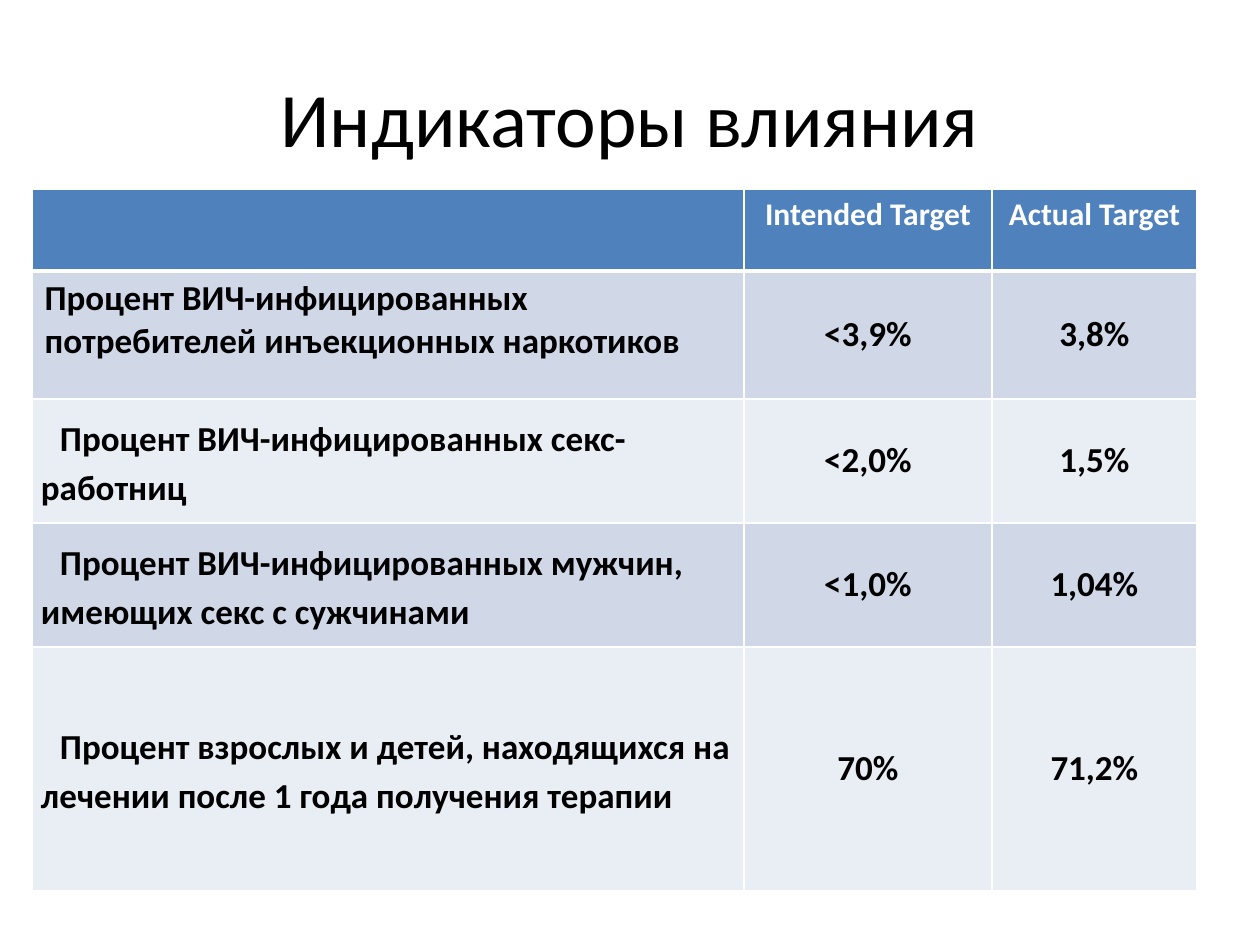
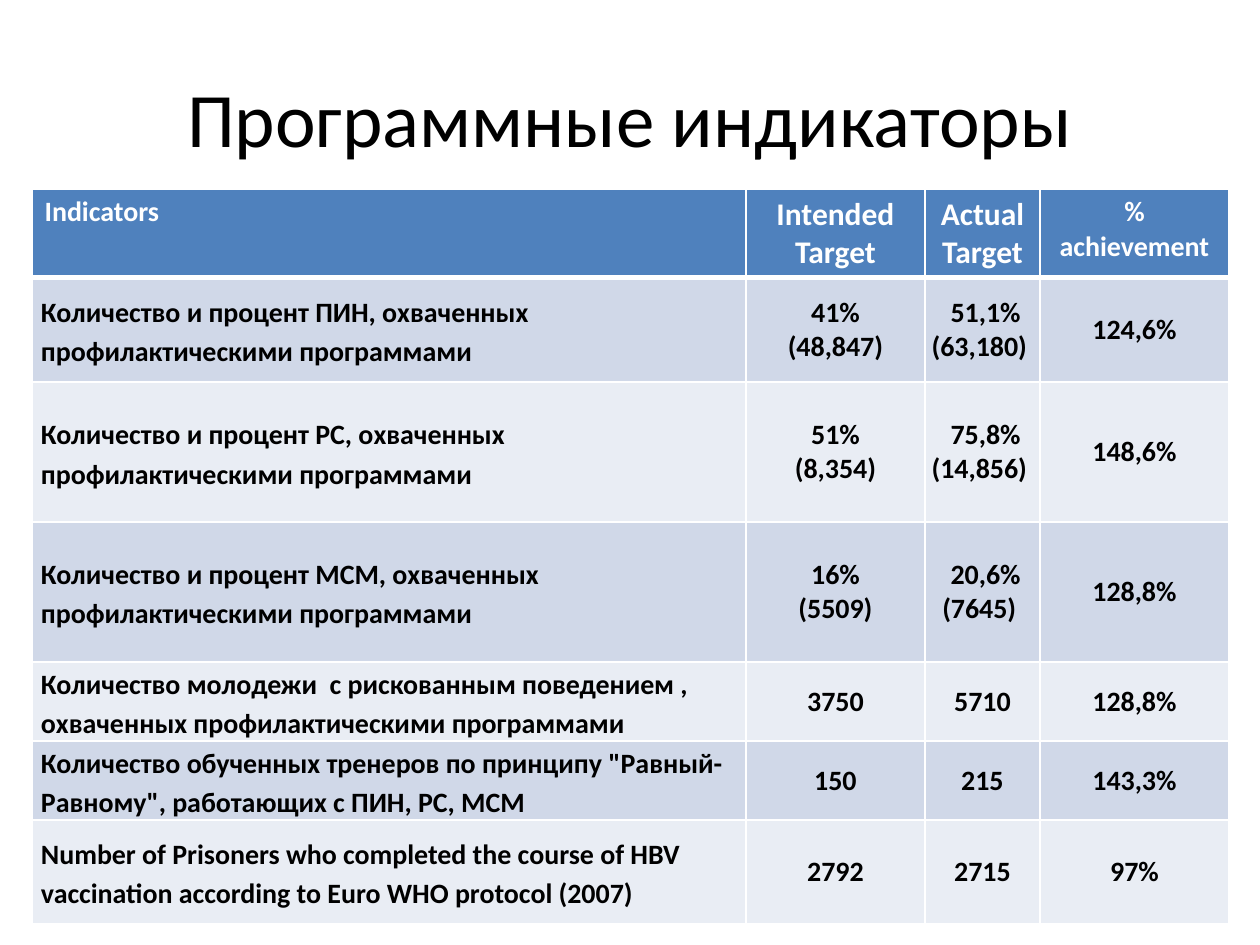
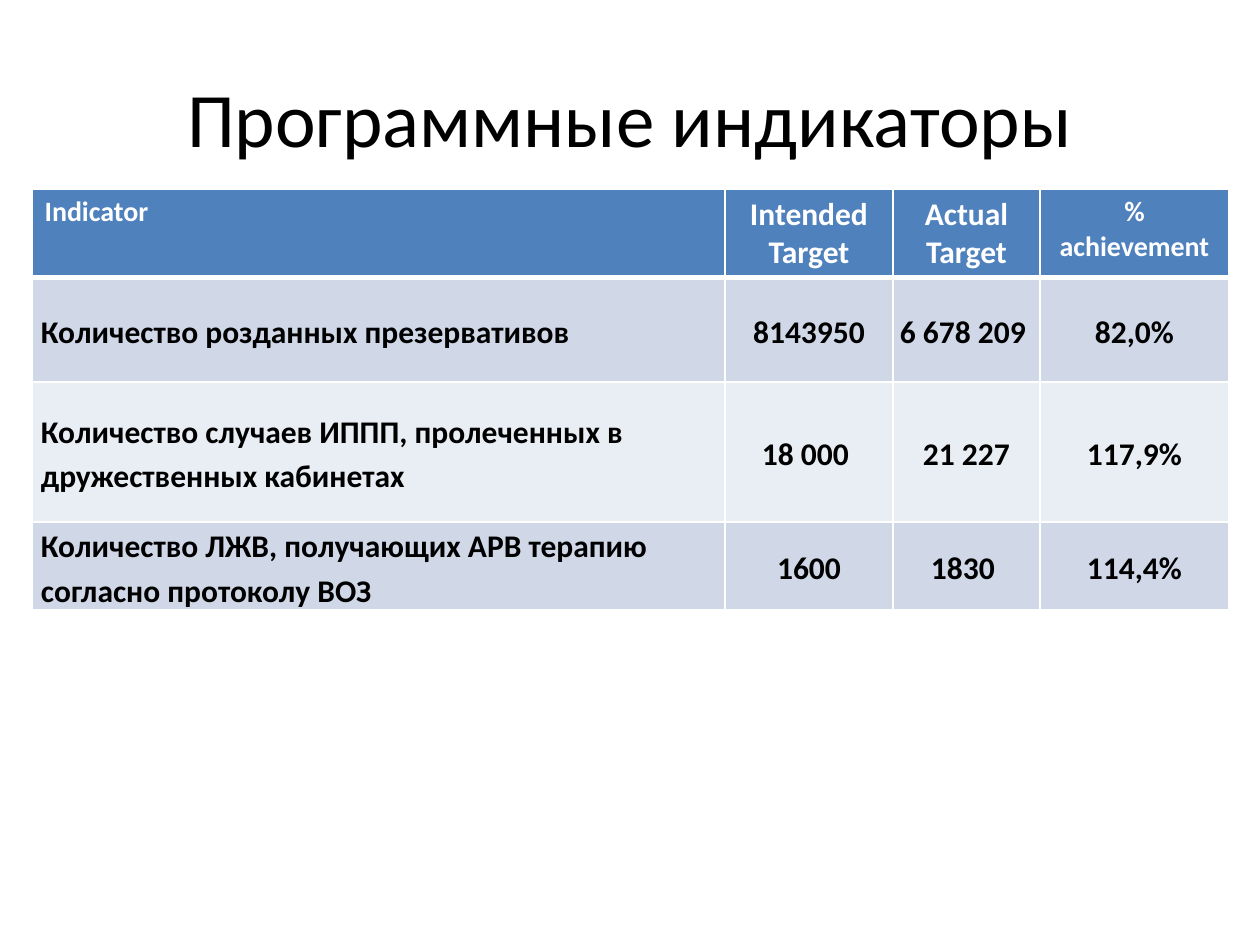
from dataclasses import dataclass

from lxml import etree
from pptx import Presentation
from pptx import util as u
from pptx.dml.color import RGBColor
from pptx.enum import text
from pptx.oxml.ns import qn


@dataclass(frozen=True)
class Theme:
    font: str = "Calibri"
    ink: str = "000000"
    white: str = "FFFFFF"
    head: str = "4F81BD"
    bands: tuple = ("D0D8E8", "E9EDF4")
    title: int = 44
    large: int = 20
    mid: int = 18
    small: int = 16
    thin: int = 1
    thick: int = 3
    loose: float = 1.15


THEME = Theme()
WIDE, HIGH = 1260, 945
TITLE_BOX = (63, 38, 1134, 157)
TABLE_AT = (32, 189)
SIDES = ("L", "R", "T", "B")
CENTER = text.PP_ALIGN.CENTER
LEFT = text.PP_ALIGN.LEFT
MIDDLE = text.MSO_ANCHOR.MIDDLE


def px(n):
    return u.Emu(round(n * 914400 / 126))


def write(frame, words, size, color, align, bold=True, space=None, indent=0):
    par = frame.paragraphs[0]
    par.alignment = align
    if space:
        par.line_spacing = space
    if indent:
        props = par._p.get_or_add_pPr()
        props.set("marL", "0")
        props.set("indent", str(px(indent)))
    for row, line in enumerate(words.split("\n")):
        if row:
            par.add_line_break()
        run = par.add_run()
        run.text = line
        run.font.name = THEME.font
        run.font.size = u.Pt(size)
        run.font.bold = bold
        run.font.color.rgb = RGBColor.from_string(color)


def add_title(slide, words, box):
    shape = slide.shapes.add_textbox(*map(px, box))
    frame = shape.text_frame
    frame.word_wrap = True
    frame.vertical_anchor = MIDDLE
    write(frame, words, THEME.title, THEME.ink, CENTER, bold=False)


def paint(cell, color, top, bottom):
    cell.fill.solid()
    cell.fill.fore_color.rgb = RGBColor.from_string(color)
    props = cell._tc.get_or_add_tcPr()
    widths = (THEME.thin, THEME.thin, top, bottom)
    for place, (side, width) in enumerate(zip(SIDES, widths)):
        line = etree.Element(qn(f"a:ln{side}"), w=str(u.Pt(width)))
        fill = etree.SubElement(line, qn("a:solidFill"))
        etree.SubElement(fill, qn("a:srgbClr"), val=THEME.white)
        props.insert(place, line)


def inset(cell, side):
    cell.margin_left = cell.margin_right = px(side)
    cell.margin_top = cell.margin_bottom = 0
    cell.vertical_anchor = MIDDLE


def fill_head(cells, heads):
    for col, (cell, (words, size)) in enumerate(zip(cells, heads)):
        paint(cell, THEME.head, THEME.thin, THEME.thick)
        if words:
            write(cell.text_frame, words, size, THEME.white, CENTER if col else LEFT)


def fill_row(cells, row, words, size, space, indent, plain):
    top = THEME.thin if row else THEME.thick
    for col, (cell, word) in enumerate(zip(cells, words)):
        paint(cell, THEME.bands[row % 2], top, THEME.thin)
        if col:
            inset(cell, 0)
            write(cell.text_frame, word, size, THEME.ink, CENTER, space=space)
        elif plain:
            write(cell.text_frame, word, size, THEME.ink, LEFT)
        else:
            inset(cell, 9)
            write(cell.text_frame, word, size, THEME.ink, LEFT,
                  space=THEME.loose, indent=indent)


def add_grid(slide, at, cols, rows, heads, body, size, space=None, indent=0, plain=None):
    box = (*at, sum(cols), sum(rows))
    grid = slide.shapes.add_table(len(rows), len(cols), *map(px, box)).table
    for col, width in zip(grid.columns, cols):
        col.width = px(width)
    for row, height in zip(grid.rows, rows):
        row.height = px(height)
    fill_head(grid.rows[0].cells, heads)
    for row, words in enumerate(body):
        fill_row(grid.rows[row + 1].cells, row, words, size, space, indent, row == plain)


def add_slide(deck, title, **grid):
    slide = deck.slides.add_slide(deck.slide_layouts[6])
    add_title(slide, title, TITLE_BOX)
    add_grid(slide, TABLE_AT, **grid)


def goal_heads(first):
    return [(first, THEME.small), ("Intended Target", THEME.mid),
            ("Actual Target", THEME.mid), ("% achievement", THEME.small)]


IMPACT = [
    ("Процент ВИЧ-инфицированных потребителей инъекционных наркотиков", "<3,9%", "3,8%"),
    ("Процент ВИЧ-инфицированных секс-работниц", "<2,0%", "1,5%"),
    ("Процент ВИЧ-инфицированных мужчин, имеющих секс с сужчинами", "<1,0%", "1,04%"),
    ("Процент взрослых и детей, находящихся на лечении после 1 года получения терапии",
     "70%", "71,2%"),
]
REACH = [
    ("Количество и процент ПИН, охваченных профилактическими программами",
     "41%\n(48,847)", " 51,1%\n(63,180) ", "124,6%"),
    ("Количество и процент РС, охваченных профилактическими программами",
     "51%\n(8,354)", " 75,8%\n(14,856) ", "148,6%"),
    ("Количество и процент МСМ, охваченных профилактическими программами",
     "16%\n(5509)", " 20,6%\n(7645) ", "128,8%"),
    ("Количество молодежи  с рискованным поведением , охваченных профилактическими программами",
     "3750", "5710", "128,8%"),
    ("Количество обученных тренеров по принципу \"Равный-Равному\", работающих с ПИН, РС, МСМ",
     "150", "215", "143,3%"),
    ("Number of Prisoners who completed the course of HBV vaccination "
     "according to Euro WHO protocol (2007)", "2792", "2715", "97%"),
]
CARE = [
    ("Количество розданных презервативов", "8143950", "6 678 209 ", "82,0%"),
    ("Количество случаев ИППП, пролеченных в дружественных кабинетах",
     "18 000 ", "21 227", "117,9%"),
    ("Количество ЛЖВ, получающих АРВ терапию согласно протоколу ВОЗ",
     "1600", "1830 ", "114,4%"),
]


def main():
    deck = Presentation()
    deck.slide_width, deck.slide_height = px(WIDE), px(HIGH)
    add_slide(deck, "Индикаторы влияния",
              cols=(712, 248, 205), rows=(82, 128, 124, 124, 244),
              heads=[("", THEME.mid), ("Intended Target", THEME.mid),
                     ("Actual Target", THEME.mid)],
              body=IMPACT, size=THEME.large, indent=19, plain=0)
    add_slide(deck, "Программные индикаторы",
              cols=(714, 179, 115, 189), rows=(88, 105, 140, 140, 79, 79, 104),
              heads=goal_heads("Indicators"), body=REACH, size=THEME.small)
    add_slide(deck, "Программные индикаторы",
              cols=(693, 168, 147, 189), rows=(88, 105, 140, 88),
              heads=goal_heads("Indicator"), body=CARE, size=THEME.mid,
              space=THEME.loose)
    deck.save("out.pptx")


if __name__ == "__main__":
    main()
